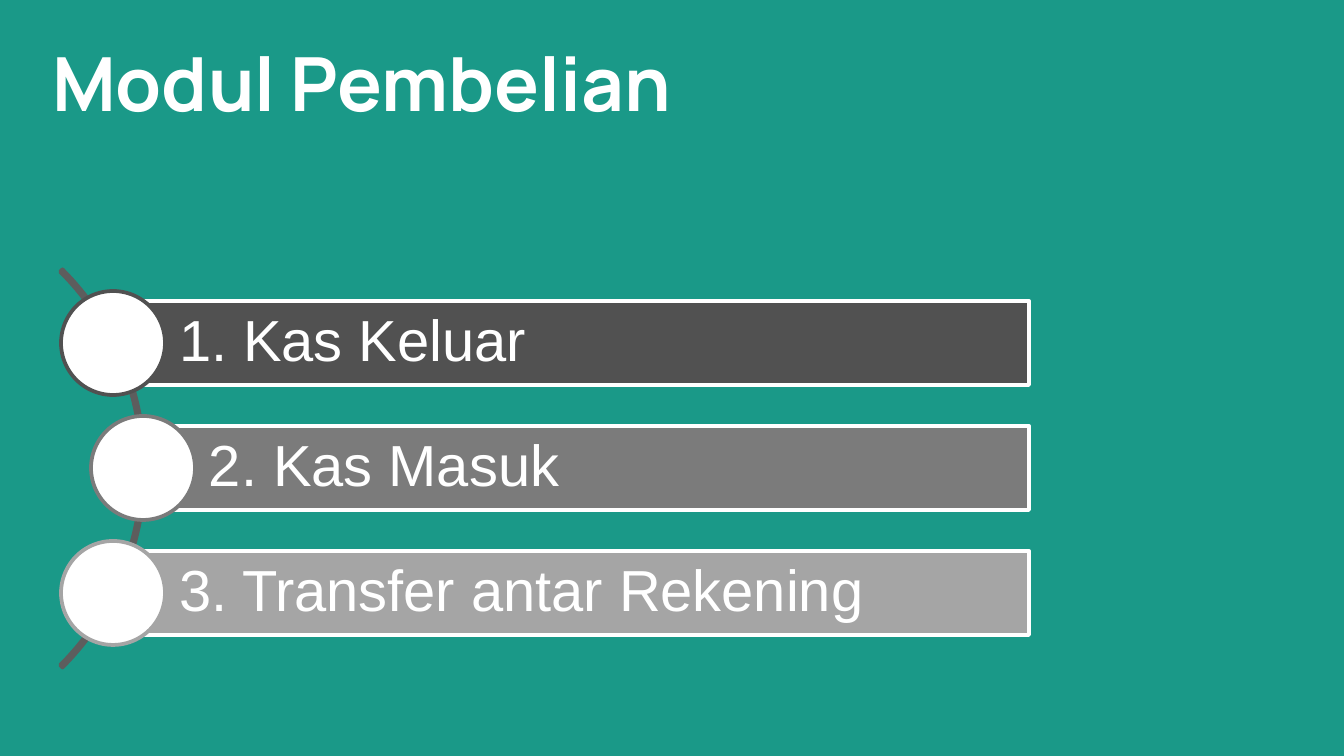
from dataclasses import dataclass

from pptx import Presentation
from pptx.dml.color import RGBColor
from pptx.enum.shapes import MSO_SHAPE
from pptx.enum.text import MSO_ANCHOR, PP_ALIGN
from pptx.util import Emu, Pt

EMU_PER_PX = 914400 / 134.4

TEAL = RGBColor(0x1A, 0x99, 0x88)
WHITE = RGBColor(0xFF, 0xFF, 0xFF)
ARC_GRAY = RGBColor(0x5D, 0x5D, 0x5D)
DARK_GRAY = RGBColor(0x51, 0x51, 0x51)
MID_GRAY = RGBColor(0x7B, 0x7B, 0x7B)
LIGHT_GRAY = RGBColor(0xA5, 0xA5, 0xA5)

BAR_TOP, BAR_RIGHT, BAR_HEIGHT, BAR_PITCH = 301, 1029, 84, 125
CIRCLE_SIZE = 104

TITLE_FONT = {"name": "Manrope", "size": Pt(40), "bold": True}
ITEM_FONT = {"name": "Arial", "size": Pt(31), "bold": False}


@dataclass(frozen=True)
class Box:
    left: int
    top: int
    width: int
    height: int

    def emu(self) -> list[Emu]:
        return [px(n) for n in (self.left, self.top, self.width, self.height)]


@dataclass(frozen=True)
class Item:
    label: str
    left: int
    color: RGBColor


ITEMS = [
    Item("1. Kas Keluar", 113, DARK_GRAY),
    Item("2. Kas Masuk", 143, MID_GRAY),
    Item("3. Transfer antar Rekening", 113, LIGHT_GRAY),
]


def px(length: int) -> Emu:
    return Emu(round(length * EMU_PER_PX))


def write_text(shape, text: str, font: dict, frame: dict, paragraph_format: dict) -> None:
    """Fill a shape with one left-aligned white paragraph."""
    text_frame = shape.text_frame
    for name, value in frame.items():
        setattr(text_frame, name, value)
    paragraph = text_frame.paragraphs[0]
    for name, value in {"alignment": PP_ALIGN.LEFT, **paragraph_format}.items():
        setattr(paragraph, name, value)
    run = paragraph.add_run()
    run.text = text
    for name, value in font.items():
        setattr(run.font, name, value)
    run.font.color.rgb = WHITE


def add_outlined_shape(slide, kind: MSO_SHAPE, box: Box, line: RGBColor,
                       fill: RGBColor | None = None):
    shape = slide.shapes.add_shape(kind, *box.emu())
    shape.shadow.inherit = False
    if fill is None:
        shape.fill.background()
    else:
        shape.fill.solid()
        shape.fill.fore_color.rgb = fill
    shape.line.color.rgb = line
    shape.line.width = Pt(2)
    return shape


def add_title(slide, text: str) -> None:
    title = slide.shapes.add_textbox(*Box(39, 43, 986, 97).emu())
    margins = {f"margin_{side}": Pt(7.2) for side in ("left", "top", "right", "bottom")}
    frame = {"word_wrap": True, "vertical_anchor": MSO_ANCHOR.BOTTOM, **margins}
    write_text(title, text, TITLE_FONT, frame, {})


def add_arc(slide) -> None:
    arc = add_outlined_shape(slide, MSO_SHAPE.BLOCK_ARC, Box(-418, 187, 563, 563), ARC_GRAY)
    for index, value in enumerate((189, 27, 0.006)):
        arc.adjustments[index] = value


def add_item(slide, item: Item, top: int) -> None:
    """Draw a labelled bar with a circle centred on its left edge."""
    bar_box = Box(item.left, top, BAR_RIGHT - item.left, BAR_HEIGHT)
    bar = add_outlined_shape(slide, MSO_SHAPE.RECTANGLE, bar_box, WHITE, item.color)
    frame = {"word_wrap": True, "vertical_anchor": MSO_ANCHOR.MIDDLE,
             "margin_left": px(66), "margin_top": px(12),
             "margin_right": px(12), "margin_bottom": px(12)}
    write_text(bar, item.label, ITEM_FONT, frame, {"line_spacing": 0.9})

    radius = CIRCLE_SIZE // 2
    circle_box = Box(item.left - radius, top + BAR_HEIGHT // 2 - radius,
                     CIRCLE_SIZE, CIRCLE_SIZE)
    add_outlined_shape(slide, MSO_SHAPE.OVAL, circle_box, item.color, WHITE)


def main() -> None:
    presentation = Presentation()
    presentation.slide_width, presentation.slide_height = px(1344), px(756)
    slide = presentation.slides.add_slide(presentation.slide_layouts[6])
    slide.background.fill.solid()
    slide.background.fill.fore_color.rgb = TEAL

    add_title(slide, "Modul Pembelian")
    add_arc(slide)
    for index, item in enumerate(ITEMS):
        add_item(slide, item, BAR_TOP + index * BAR_PITCH)
    presentation.save("out.pptx")


if __name__ == "__main__":
    main()
